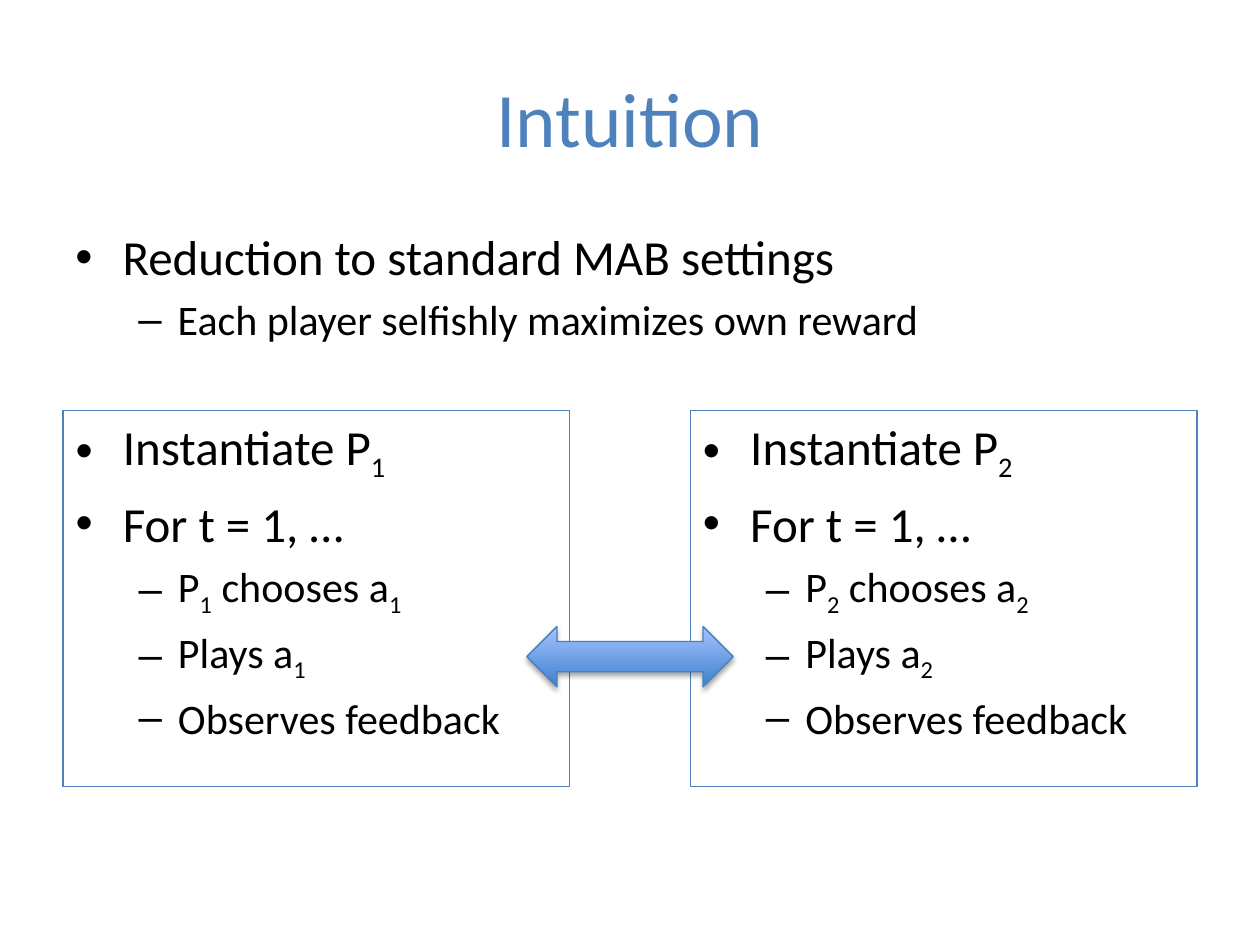
from dataclasses import dataclass

from lxml import etree
from pptx import Presentation
from pptx.dml.color import RGBColor
from pptx.enum import shapes, text
from pptx.oxml import ns
from pptx.util import Pt

FONT = "Calibri"
BLUE, BLACK = "4F81BD", "000000"


@dataclass(frozen=True)
class Box:
    left: float
    top: float
    width: float
    height: float

    def lengths(self) -> tuple:
        return Pt(self.left), Pt(self.top), Pt(self.width), Pt(self.height)


@dataclass(frozen=True)
class Level:
    size: float
    margin: float
    hanging: float
    bullet: str


@dataclass(frozen=True)
class Item:
    level: int
    text: str  # "_" makes the next character a subscript


LEVELS = (Level(28, 27, 27, "•"), Level(24, 58.5, 22.5, "–"))


def rgb(value: str) -> RGBColor:
    return RGBColor.from_string(value)


def style_run(r, size: float, color: str) -> None:
    r.font.name = FONT
    r.font.size = Pt(size)
    r.font.color.rgb = rgb(color)


def place(s, box: Box) -> None:
    s.left, s.top, s.width, s.height = box.lengths()


def add_bullet(p, level: Level) -> None:
    pPr = p._p.get_or_add_pPr()
    pPr.set("marL", str(Pt(level.margin)))
    pPr.set("indent", str(-Pt(level.hanging)))
    etree.SubElement(pPr, ns.qn("a:buFont"), typeface="Arial")
    etree.SubElement(pPr, ns.qn("a:buChar"), char=level.bullet)


def add_runs(p, content: str, size: float) -> None:
    plain, *rest = content.split("_")
    pieces = [(plain, False)]
    for part in rest:
        pieces += [(part[0], True), (part[1:], False)]
    for piece, is_sub in pieces:
        if piece:
            r = p.add_run()
            r.text = piece
            style_run(r, size, BLACK)
            if is_sub:
                r._r.get_or_add_rPr().set("baseline", "-25000")


def fill_list(tf, items: list[Item]) -> None:
    tf.word_wrap = True
    tf.auto_size = text.MSO_AUTO_SIZE.NONE
    tf.vertical_anchor = text.MSO_ANCHOR.TOP
    for i, item in enumerate(items):
        p = tf.paragraphs[0] if i == 0 else tf.add_paragraph()
        level = LEVELS[item.level]
        p.level = item.level
        add_bullet(p, level)
        p.space_before = Pt(0.2 * level.size if i else 0)
        add_runs(p, item.text, level.size)


def player_steps(n: int) -> list[Item]:
    return [
        Item(0, f"Instantiate P_{n}"),
        Item(0, "For t = 1, …"),
        Item(1, f"P_{n} chooses a_{n}"),
        Item(1, f"Plays a_{n}"),
        Item(1, "Observes feedback"),
    ]


def draw_title(s, box: Box, title: str) -> None:
    place(s, box)
    tf = s.text_frame
    tf.text = title
    tf.vertical_anchor = text.MSO_ANCHOR.MIDDLE
    p = tf.paragraphs[0]
    p.alignment = text.PP_ALIGN.CENTER
    style_run(p.runs[0], 44, BLUE)


def draw_player(s, box: Box, n: int) -> None:
    place(s, box)
    s.line.color.rgb = rgb(BLUE)
    s.line.width = Pt(0.75)
    fill_list(s.text_frame, player_steps(n))


def add_shadow(s, blur: float, distance: float, opacity: int) -> None:
    """Replace the theme shadow by a soft black one falling downwards."""
    s.shadow.inherit = False
    effects = s._element.spPr.find(ns.qn("a:effectLst"))
    shadow = etree.SubElement(
        effects, ns.qn("a:outerShdw"), blurRad=str(Pt(blur)),
        dist=str(Pt(distance)), dir=str(90 * 60000), rotWithShape="0")
    color = etree.SubElement(shadow, ns.qn("a:srgbClr"), val=BLACK)
    etree.SubElement(color, ns.qn("a:alpha"), val=str(opacity * 1000))


def draw_arrow(sld, box: Box) -> None:
    s = sld.shapes.add_shape(shapes.MSO_SHAPE.LEFT_RIGHT_ARROW, *box.lengths())
    s.fill.gradient()
    s.fill.gradient_angle = 90
    for stop, position, color in zip(s.fill.gradient_stops, (0, 1), ("3F80CE", "A4C4FF")):
        stop.position = position
        stop.color.rgb = rgb(color)
    s.line.color.rgb = rgb("4B7EBC")
    s.line.width = Pt(0.75)
    add_shadow(s, 3.1, 1.8, 35)


def main() -> None:
    prs = Presentation()
    prs.slide_width, prs.slide_height = Pt(720), Pt(540)
    sld = prs.slides.add_slide(prs.slide_layouts.get_by_name("Two Content"))

    margin, content_width, player_width = 36, 648, 289.5
    draw_title(sld.shapes.title, Box(margin, 21.6, content_width, 90), "Intuition")
    for n in (1, 2):
        left = margin + (n - 1) * (content_width - player_width)
        draw_player(sld.placeholders[n], Box(left, 234.5, player_width, 215), n)

    summary = sld.shapes.add_textbox(*Box(margin, 126, content_width, 76.5).lengths())
    fill_list(summary.text_frame, [
        Item(0, "Reduction to standard MAB settings"),
        Item(1, "Each player selfishly maximizes own reward"),
    ])
    draw_arrow(sld, Box(301, 358, 118, 34.5))
    prs.save("out.pptx")


if __name__ == "__main__":
    main()
